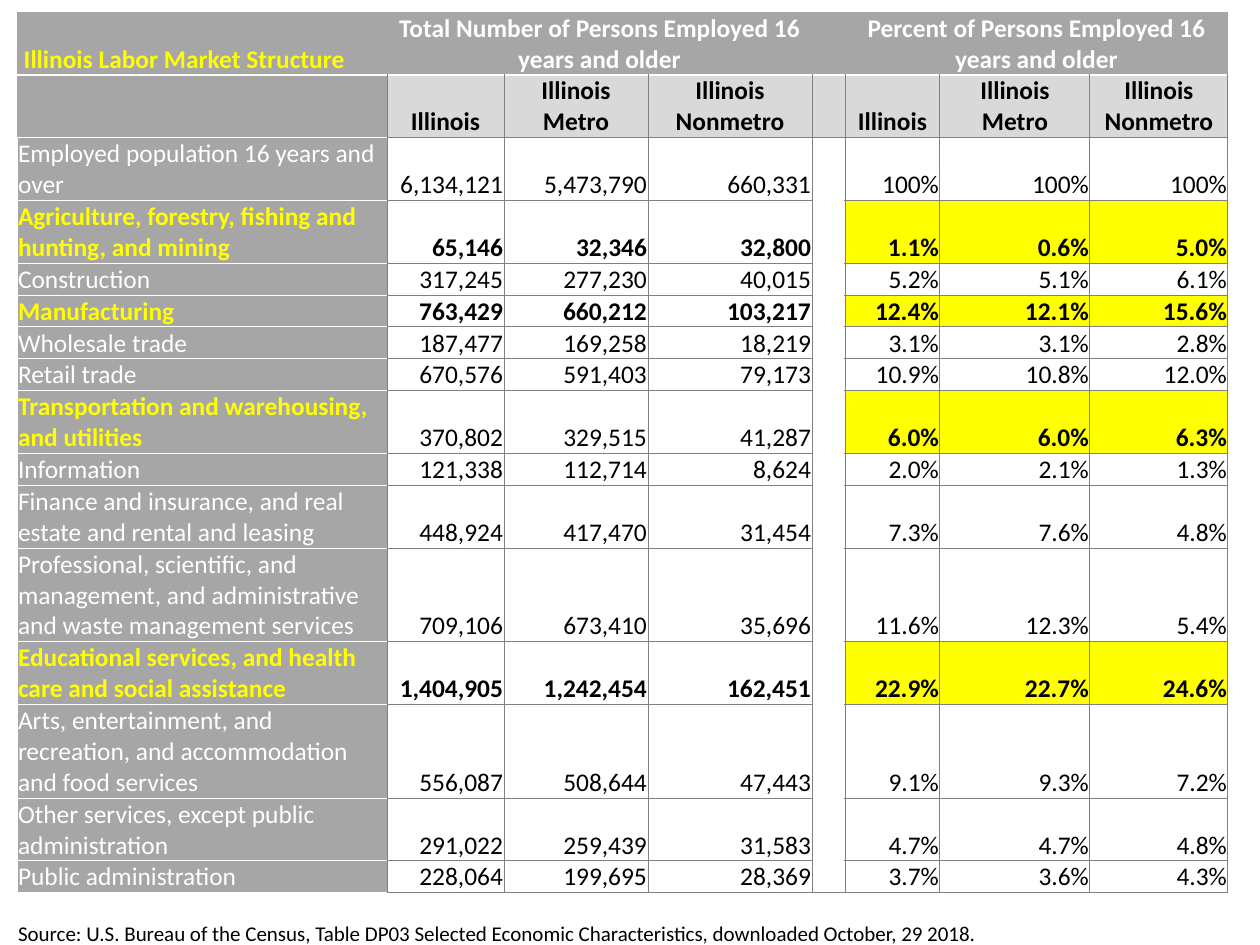
"""Build a one-slide table of the Illinois labor market by industry."""
from lxml.etree import SubElement, Element
from pptx import Presentation
from pptx.dml.color import RGBColor
from pptx.enum.text import MSO_ANCHOR, PP_ALIGN
from pptx.oxml.ns import qn
from pptx.util import Pt

TITLE = " Illinois Labor Market Structure"
GROUPS = {
    1: "Total Number of Persons Employed 16 years and older",
    5: "Percent of Persons Employed 16 years and older",
}
AREAS = ["Illinois", "Illinois\vMetro", "Illinois Nonmetro"]
ROWS = [
    (2, "Employed population 16 years and over", "6,134,121 5,473,790 660,331", "100% 100% 100%"),
    (2, "Agriculture, forestry, fishing and hunting, and mining", "65,146 32,346 32,800", "1.1% 0.6% 5.0%"),
    (1, "Construction", "317,245 277,230 40,015", "5.2% 5.1% 6.1%"),
    (1, "Manufacturing", "763,429 660,212 103,217", "12.4% 12.1% 15.6%"),
    (1, "Wholesale trade", "187,477 169,258 18,219", "3.1% 3.1% 2.8%"),
    (1, "Retail trade", "670,576 591,403 79,173", "10.9% 10.8% 12.0%"),
    (2, "Transportation and warehousing, and utilities", "370,802 329,515 41,287", "6.0% 6.0% 6.3%"),
    (1, "Information", "121,338 112,714 8,624", "2.0% 2.1% 1.3%"),
    (2, "Finance and insurance, and real estate and rental and leasing", "448,924 417,470 31,454", "7.3% 7.6% 4.8%"),
    (3, "Professional, scientific, and management, and administrative and waste management services",
     "709,106 673,410 35,696", "11.6% 12.3% 5.4%"),
    (2, "Educational services, and health care and social assistance", "1,404,905 1,242,454 162,451",
     "22.9% 22.7% 24.6%"),
    (3, "Arts, entertainment, and recreation, and accommodation and food services", "556,087 508,644 47,443",
     "9.1% 9.3% 7.2%"),
    (2, "Other services, except public administration", "291,022 259,439 31,583", "4.7% 4.7% 4.8%"),
    (1, "Public administration", "228,064 199,695 28,369", "3.7% 3.6% 4.3%"),
]
MARKED = {"Agriculture", "Manufacturing", "Transportation", "Educational"}
LIGHT = {"Transportation"}
SOURCE = ("Source: U.S. Bureau of the Census, Table DP03 Selected Economic Characteristics, "
          "downloaded October, 29 2018.")

THEME = {
    "font": "Calibri", "body": 14.5, "note": 12, "tiny": 6,
    "ink": "000000", "white": "FFFFFF", "mark": "FFFF00",
    "side": "A6A6A6", "head": "D9D9D9", "line": "808080",
}
WIDTHS = [370, 117, 144, 164, 33, 95, 150, 138]
LEFT, TOP, LINE, BLANK, NOTE = 17, 12, 31, 28, 25
GAP = 4
PLAIN = "{2D5ABB26-0587-4C30-8999-92F81FD0307C}"
THIN, THICK = ("line", 0.5), ("white", 1.5)
RULE = ("white", 0.5)
BOX = dict.fromkeys("LRTB", THIN)


def px(num):
    return round(num * 914400 / 126)


def color(name):
    return RGBColor.from_string(THEME[name])


def edge(cell, sides):
    props = cell._tc.get_or_add_tcPr()
    for spot, side in enumerate("LRTB"):
        name, width = sides.get(side, (None, 0))
        line = Element(qn(f"a:ln{side}"), w=str(Pt(width)))
        if name:
            fill = SubElement(line, qn("a:solidFill"))
            SubElement(fill, qn("a:srgbClr"), val=THEME[name])
        else:
            SubElement(line, qn("a:noFill"))
        props.insert(spot, line)


def put(cell, text="", ink="ink", bold=False, align=PP_ALIGN.LEFT, fill=None,
        sides=BOX, size="body", anchor=MSO_ANCHOR.BOTTOM):
    cell.margin_left = cell.margin_right = cell.margin_top = px(1)
    cell.margin_bottom = 0
    cell.vertical_anchor = anchor
    if fill:
        cell.fill.solid()
        cell.fill.fore_color.rgb = color(fill)
    else:
        cell.fill.background()
    edge(cell, sides)
    para = cell.text_frame.paragraphs[0]
    para.alignment = align
    if text:
        para.text = text
        font = para.font
        font.name, font.size, font.bold = THEME["font"], Pt(THEME[size]), bold
        font.color.rgb = color(ink)
    else:
        SubElement(para._p, qn("a:endParaRPr"), sz=str(THEME["tiny"] * 100))


def heads(table):
    for col in range(len(WIDTHS)):
        group = GROUPS.get(col, "")
        under = {"B": THICK}
        if col == 0:
            put(table.cell(0, 0), TITLE, "mark", True, fill="side", sides=under)
            put(table.cell(1, 0), fill="side", sides={"T": THICK, "R": THIN, "B": RULE})
            continue
        put(table.cell(0, col), group, "white", True, PP_ALIGN.CENTER, "side", under,
            anchor=MSO_ANCHOR.MIDDLE)
        area = "" if col == GAP else AREAS[(col - 1) % GAP]
        put(table.cell(1, col), area, "ink", True, PP_ALIGN.CENTER, "head", BOX | {"T": THICK})
    for col in GROUPS:
        table.cell(0, col).merge(table.cell(0, col + 2))


def body(table):
    for row, (_, name, counts, rates) in enumerate(ROWS, 2):
        key = name.split()[0].strip(",")
        hot = key in MARKED
        put(table.cell(row, 0), name, "mark" if hot else "white", hot, fill="side",
            sides={"L": RULE, "T": RULE, "R": THIN, "B": RULE})
        gap = {"L": THIN, "R": THIN}
        if row == 2:
            gap["T"] = THIN
        if row == len(ROWS) + 1:
            gap["B"] = THIN
        put(table.cell(row, GAP), sides=gap)
        for start, nums, bold, fill in (
            (1, counts, hot and key not in LIGHT, None),
            (GAP + 1, rates, hot, "mark" if hot else None),
        ):
            for col, num in enumerate(nums.split(), start):
                put(table.cell(row, col), num, "ink", bold, PP_ALIGN.RIGHT, fill)


def foot(table):
    last = len(ROWS) + 3
    for col in range(len(WIDTHS)):
        put(table.cell(last - 1, col), sides={"T": THIN if col else RULE})
        put(table.cell(last, col), "" if col else SOURCE, size="note", sides={})
    table.cell(last, 0).merge(table.cell(last, len(WIDTHS) - 1))


def main():
    deck = Presentation()
    deck.slide_width, deck.slide_height = px(1260), px(945)
    slide = deck.slides.add_slide(deck.slide_layouts[6])
    highs = [2 * LINE] * 2 + [row[0] * LINE for row in ROWS] + [BLANK, NOTE]
    frame = slide.shapes.add_table(len(highs), len(WIDTHS), px(LEFT), px(TOP),
                                   px(sum(WIDTHS)), px(sum(highs)))
    table = frame.table
    table.first_row = table.horz_banding = False
    table._tbl.tblPr.find(qn("a:tableStyleId")).text = PLAIN
    for col, wide in zip(table.columns, WIDTHS):
        col.width = px(wide)
    for row, high in zip(table.rows, highs):
        row.height = px(high)
    heads(table)
    body(table)
    foot(table)
    deck.save("out.pptx")


if __name__ == "__main__":
    main()
